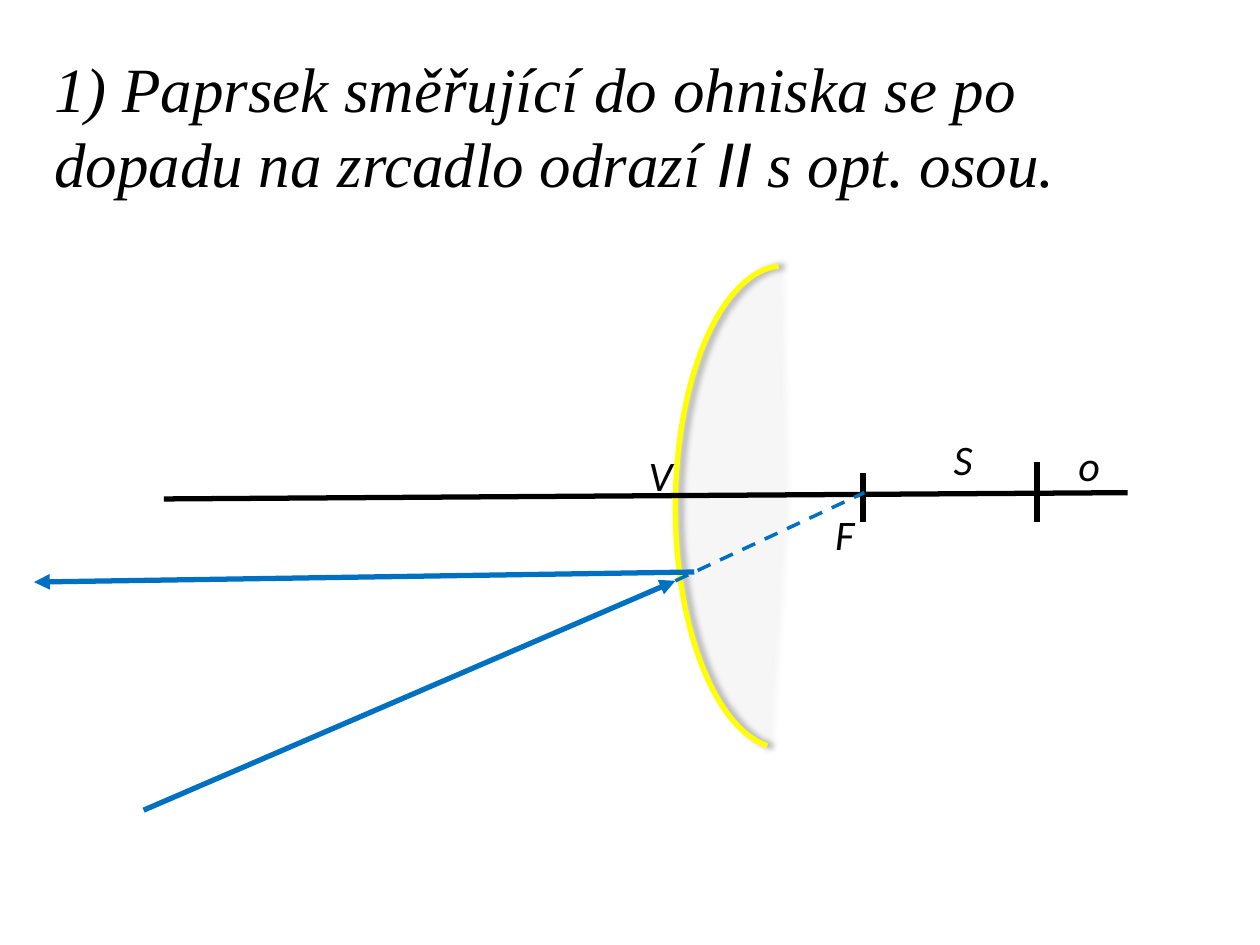
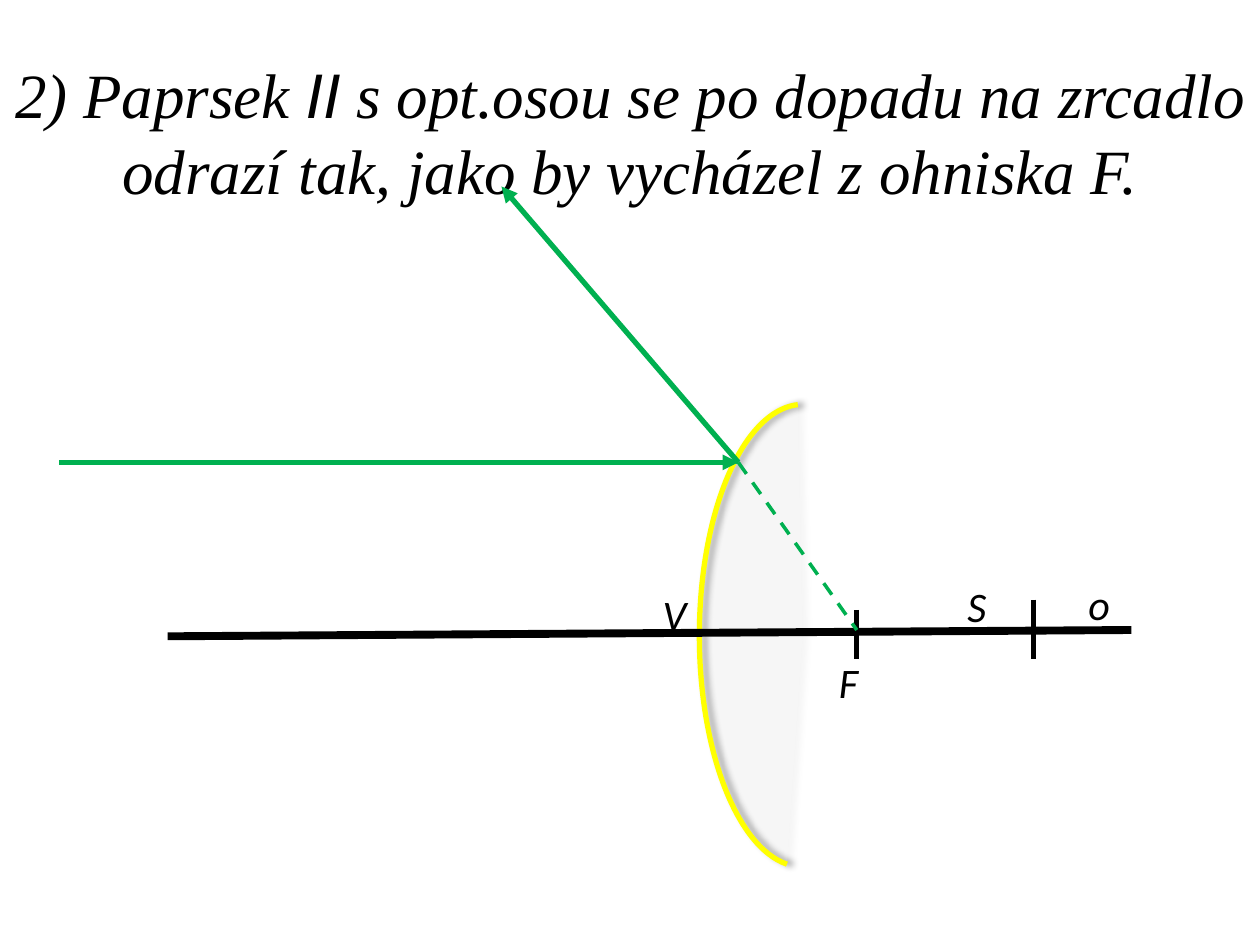
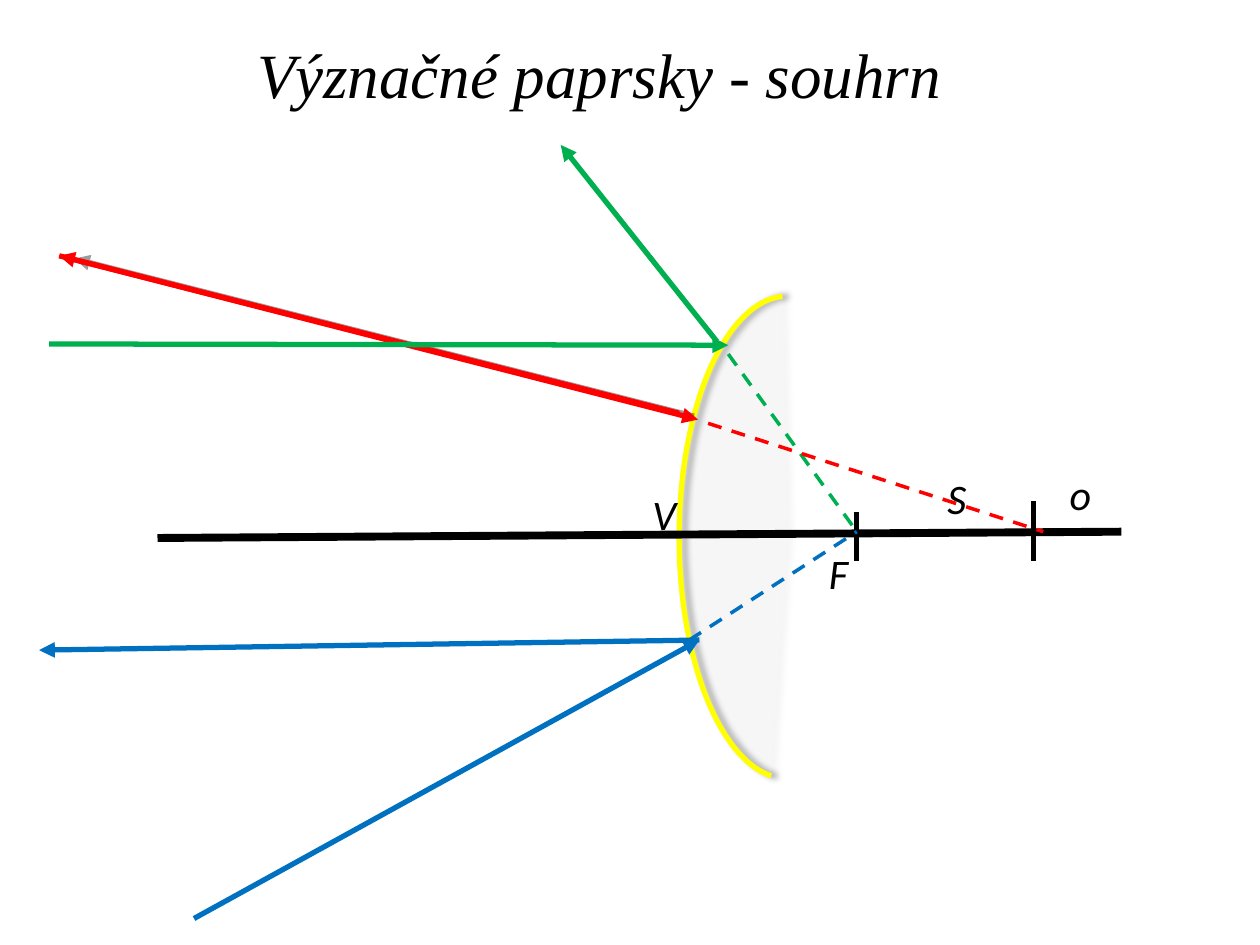
import dataclasses
import typing

import lxml.etree
import pptx
import pptx.dml.color
import pptx.enum.dml
import pptx.enum.shapes
import pptx.enum.text
import pptx.oxml.ns
import pptx.util

COLUMNS, ROWS = 100, 75
CELL = pptx.util.Inches(0.1)
BLACK, WHITE, YELLOW = "000000", "FFFFFF", "FFFF00"
BLUE, GREEN, RED = "0070C0", "00B050", "FF0000"
SERIF, SANS, PARALLEL = "Times New Roman", "Calibri", "Arial"
ALIGN = pptx.enum.text.PP_ALIGN
ANCHOR = pptx.enum.text.MSO_ANCHOR
Point = tuple[float, float]
Box = tuple[float, float, float, float]


class Shadow(typing.NamedTuple):
    alpha: int
    blur: float
    distance: float
    angle: float


class Ray(typing.NamedTuple):
    start: Point
    end: Point
    color: str
    dashed: bool = False
    shadow: typing.Optional[Shadow] = None


@dataclasses.dataclass
class Title:
    runs: list[str]
    box: Box
    align: ALIGN = ALIGN.CENTER
    anchor: ANCHOR = ANCHOR.TOP


@dataclasses.dataclass
class Scene:
    title: Title
    axis: Point
    axis_weight: float
    mirror: Box
    focus: float
    center: float
    labels: dict[str, Point]
    rays: list[Ray]


MIRROR_SHADOW = Shadow(40, 4, 3, 0)
AXIS_LENGTH, AXIS_RISE = 76.5, 0.5
LABEL_WIDTHS = {"F": 2.3}

SCENES = [
    Scene(
        Title(["1) Paprsek směřující do ohniska se po dopadu na zrcadlo odrazí ",
               "II", " s opt. osou."], (3.3, 3.4, 89.7, 19.1), ALIGN.LEFT),
        axis=(13, 39.6), axis_weight=3, mirror=(53.6, 21.1, 17.2, 38.3),
        focus=68.5, center=82.3,
        labels={"o": (84.6, 34.4), "F": (65.3, 39.9),
                "S": (74.7, 33.9), "V": (50.5, 35.2)},
        rays=[
            Ray((55.1, 45.4), (2.7, 46.2), BLUE),
            Ray((11.4, 64.3), (53.6, 46.1), BLUE),
            Ray((53.6, 46.1), (68.6, 39.1), BLUE, dashed=True),
        ],
    ),
    Scene(
        Title(["2) Paprsek ", "II", " s opt.osou se po dopadu na zrcadlo odrazí tak, "
               "jako by vycházel z ohniska F."], (0, 3.9, COLUMNS, 21)),
        axis=(13.3, 50.5), axis_weight=4.5, mirror=(55.5, 32.1, 16.4, 36.7),
        focus=68, center=82.05,
        labels={"o": (85.4, 45.4), "F": (65.6, 51.6),
                "S": (75.8, 45.6), "V": (51.6, 46.2)},
        rays=[
            Ray((4.7, 36.7), (58.6, 36.7), GREEN),
            Ray((58.6, 36.7), (39.8, 14.8), GREEN),
            Ray((58.6, 36.7), (68, 50), GREEN, dashed=True),
        ],
    ),
    Scene(
        Title(["Význačné paprsky - souhrn"], (2.7, 1.3, 89.7, 9.1),
              anchor=ANCHOR.MIDDLE),
        axis=(12.5, 42.7), axis_weight=4.5, mirror=(53.9, 23.5, 17.2, 38.3),
        focus=68, center=82.05,
        labels={"o": (83.9, 36.7), "F": (64.8, 43),
                "S": (74.2, 37), "V": (50.8, 38.3)},
        rays=[
            Ray((55.5, 50.8), (3.1, 51.6), BLUE),
            Ray((15.4, 72.9), (55.5, 50.8), BLUE),
            Ray((53.9, 32.8), (4.7, 20.3), RED, shadow=Shadow(38, 0, 8.7, 11)),
            Ray((4.7, 20.3), (55.4, 33.3), RED),
            Ray((3.9, 27.3), (57.8, 27.4), GREEN),
            Ray((56.9, 27.1), (44.5, 11.5), GREEN),
            Ray((57.8, 28.1), (68, 42.2), GREEN, dashed=True),
            Ray((54.7, 50.8), (68, 42.2), BLUE, dashed=True),
            Ray((56.2, 33.6), (82.8, 42.2), RED, dashed=True),
        ],
    ),
]


def rgb(value: str) -> pptx.dml.color.RGBColor:
    return pptx.dml.color.RGBColor.from_string(value)


def cells(values: typing.Iterable[float]) -> list[int]:
    return [round(v * CELL) for v in values]


def child(parent, tag: str, **attributes):
    return lxml.etree.SubElement(
        parent, pptx.oxml.ns.qn(tag), {k: str(v) for k, v in attributes.items()})


def add_effects(sp, shadow: typing.Optional[Shadow] = None) -> None:
    effects = child(sp._element.spPr, "a:effectLst")
    if shadow:
        outer = child(effects, "a:outerShdw",
                      blurRad=pptx.util.Pt(shadow.blur),
                      dist=pptx.util.Pt(shadow.distance),
                      dir=shadow.angle * 60000, algn="tl", rotWithShape=0)
        color = child(outer, "a:srgbClr", val=BLACK)
        child(color, "a:alpha", val=shadow.alpha * 1000)


def style_run(r, size: float, font: str) -> None:
    r.font.size = pptx.util.Pt(size)
    r.font.name = font
    r.font.italic = True
    r.font.color.rgb = rgb(BLACK)


def add_title(slide, title: Title) -> None:
    sp = slide.shapes.title
    sp.left, sp.top, sp.width, sp.height = cells(title.box)
    tf = sp.text_frame
    tf.auto_size = pptx.enum.text.MSO_AUTO_SIZE.NONE
    tf.word_wrap = True
    tf.vertical_anchor = title.anchor
    p = tf.paragraphs[0]
    p.alignment = title.align
    for text in title.runs:
        r = p.add_run()
        r.text = text
        style_run(r, 36, PARALLEL if text == "II" else SERIF)


def add_label(slide, text: str, position: Point) -> None:
    box = (*position, LABEL_WIDTHS.get(text, 3.9), 5)
    tf = slide.shapes.add_textbox(*cells(box)).text_frame
    tf.word_wrap = True
    tf.text = text
    style_run(tf.paragraphs[0].runs[0], 24, SANS)


def add_line(slide, start: Point, end: Point, color: str, weight: float):
    line = slide.shapes.add_connector(
        pptx.enum.shapes.MSO_CONNECTOR.STRAIGHT, *cells((*start, *end)))
    line.line.color.rgb = rgb(color)
    line.line.width = pptx.util.Pt(weight)
    return line


def add_ray(slide, ray: Ray) -> None:
    line = add_line(slide, ray.start, ray.end, ray.color, 2 if ray.dashed else 3)
    if ray.dashed:
        line.line.dash_style = pptx.enum.dml.MSO_LINE.DASH
    else:
        child(line.line._get_or_add_ln(), "a:tailEnd", type="triangle")
    add_effects(line, ray.shadow)


def add_mirror(slide, box: Box) -> None:
    sp = slide.shapes.add_shape(pptx.enum.shapes.MSO_SHAPE.ARC, *cells(box))
    sp.rotation = 180
    sp.adjustments[0], sp.adjustments[1] = 164.36, 53.28
    sp.fill.solid()
    sp.fill.fore_color.rgb = rgb(WHITE)
    fill = sp._element.spPr.find(pptx.oxml.ns.qn("a:solidFill"))
    child(fill[0], "a:alpha", val=10000)
    sp.line.color.rgb = rgb(YELLOW)
    sp.line.width = pptx.util.Pt(3)
    add_effects(sp, MIRROR_SHADOW)


def add_axis(slide, scene: Scene) -> None:
    x, y = scene.axis
    lines = [((x, y), (x + AXIS_LENGTH, y - AXIS_RISE), scene.axis_weight)]
    for mark, reach in ((scene.focus, 2.1), (scene.center, 2.9)):
        lines.append(((mark, y - reach), (mark, y + 1.8), 3))
    for start, end, weight in lines:
        add_effects(add_line(slide, start, end, BLACK, weight))


def draw_scene(prs, scene: Scene) -> None:
    slide = prs.slides.add_slide(prs.slide_layouts[5])
    add_title(slide, scene.title)
    add_mirror(slide, scene.mirror)
    add_axis(slide, scene)
    for ray in scene.rays:
        add_ray(slide, ray)
    for text, position in scene.labels.items():
        add_label(slide, text, position)


def main() -> None:
    prs = pptx.Presentation()
    prs.slide_width, prs.slide_height = cells((COLUMNS, ROWS))
    for scene in SCENES:
        draw_scene(prs, scene)
    prs.save("out.pptx")


if __name__ == "__main__":
    main()
